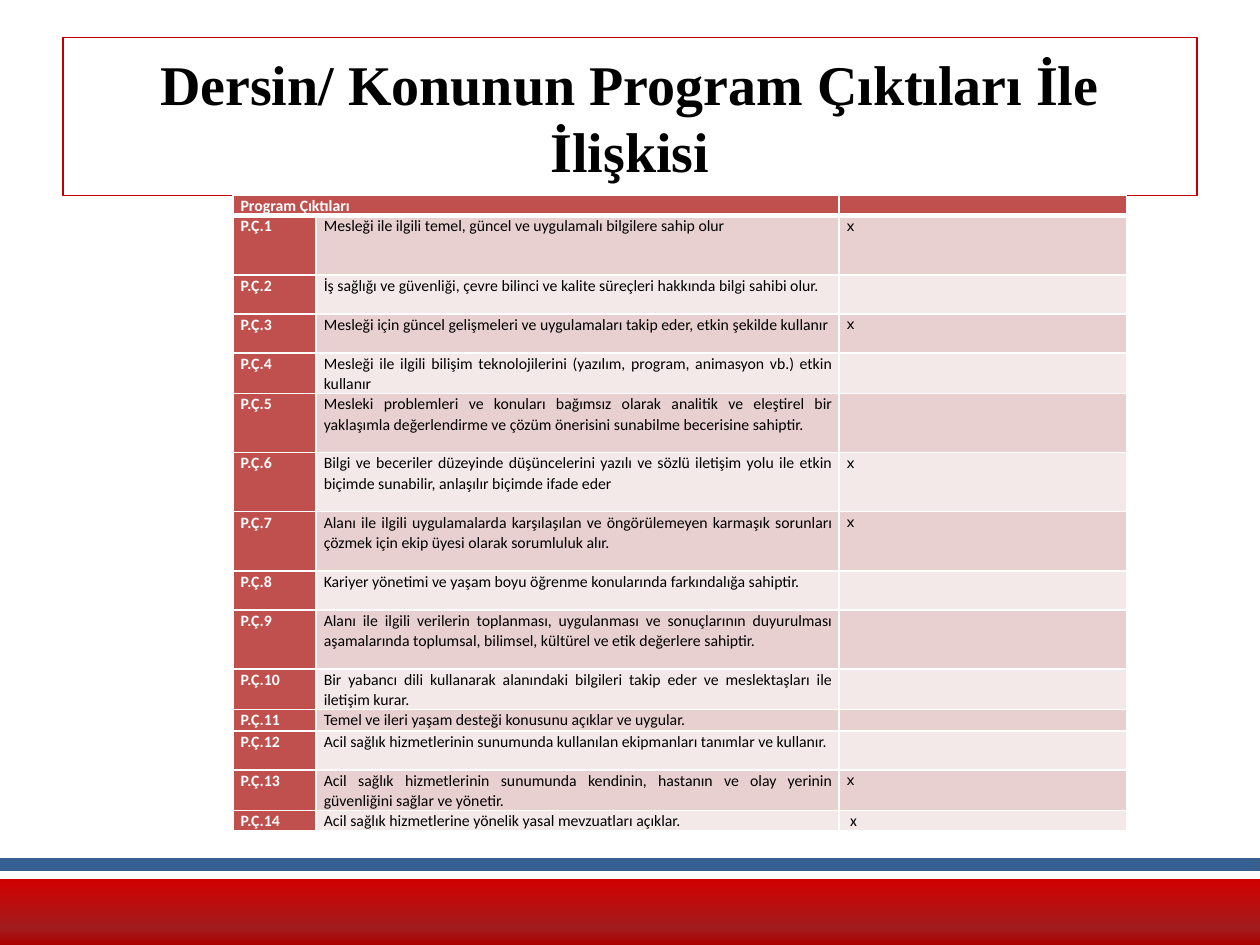
import copy

import lxml.etree
import pptx
import pptx.dml.color
import pptx.enum.shapes
import pptx.enum.text
import pptx.oxml.ns
import pptx.util

Inches = pptx.util.Inches
Pt = pptx.util.Pt
RGBColor = pptx.dml.color.RGBColor
ALIGN = pptx.enum.text.PP_ALIGN
qn = pptx.oxml.ns.qn

BLACK = RGBColor(0x00, 0x00, 0x00)
WHITE = RGBColor(0xFF, 0xFF, 0xFF)
TITLE_RED = RGBColor(0xC0, 0x00, 0x00)
HEADER_RED = RGBColor(0xC0, 0x50, 0x4D)
BAND_DARK = RGBColor(0xE8, 0xD0, 0xD0)
BAND_LIGHT = RGBColor(0xF4, 0xE9, 0xE9)
STRIPE_BLUE = RGBColor(0x37, 0x60, 0x92)
STRIPE_EDGE = RGBColor(0x3A, 0x5F, 0x8C)
FOOTER_STOPS = [
    (0, RGBColor(0xD1, 0x00, 0x00)),
    (0.74, RGBColor(0xA2, 0x1C, 0x1C)),
    (1, RGBColor(0xAB, 0x00, 0x00)),
]

COLUMN_WIDTHS = [0.66, 4.15, 2.28]
HEADER_HEIGHT = 0.16
OUTCOMES = [
    (0.47, "Mesleği ile ilgili temel, güncel ve uygulamalı bilgilere sahip olur", "x"),
    (0.31, "İş sağlığı ve güvenliği, çevre bilinci ve kalite süreçleri hakkında bilgi sahibi olur.", ""),
    (0.31, "Mesleği için güncel gelişmeleri ve uygulamaları takip eder, etkin şekilde kullanır", "x"),
    (0.31, "Mesleği ile ilgili bilişim teknolojilerini (yazılım, program, animasyon vb.) etkin kullanır", ""),
    (0.47, "Mesleki problemleri ve konuları bağımsız olarak analitik ve eleştirel bir yaklaşımla "
           "değerlendirme ve çözüm önerisini sunabilme becerisine sahiptir.", ""),
    (0.47, "Bilgi ve beceriler düzeyinde düşüncelerini yazılı ve sözlü iletişim yolu ile etkin "
           "biçimde sunabilir, anlaşılır biçimde ifade eder", "x"),
    (0.47, "Alanı ile ilgili uygulamalarda karşılaşılan ve öngörülemeyen karmaşık sorunları "
           "çözmek için ekip üyesi olarak sorumluluk alır.", "x"),
    (0.31, "Kariyer yönetimi ve yaşam boyu öğrenme konularında farkındalığa sahiptir.", ""),
    (0.47, "Alanı ile ilgili verilerin toplanması, uygulanması ve sonuçlarının duyurulması "
           "aşamalarında toplumsal, bilimsel, kültürel ve etik değerlere sahiptir.", ""),
    (0.31, "Bir yabancı dili kullanarak alanındaki bilgileri takip eder ve meslektaşları ile iletişim kurar.", ""),
    (0.17, "Temel ve ileri yaşam desteği konusunu açıklar ve uygular.", ""),
    (0.31, "Acil sağlık hizmetlerinin sunumunda kullanılan ekipmanları tanımlar ve kullanır.", ""),
    (0.31, "Acil sağlık hizmetlerinin sunumunda kendinin, hastanın ve olay yerinin güvenliğini "
           "sağlar ve yönetir.", "x"),
    (0.16, "Acil sağlık hizmetlerine yönelik yasal mevzuatları açıklar.", " x"),
]


def write_text(frame, text, size=9, font="Calibri", color=BLACK, bold=False,
               align=ALIGN.JUSTIFY, spacing=1.07):
    """Write one formatted paragraph into a text frame."""
    frame.word_wrap = True
    paragraph = frame.paragraphs[0]
    paragraph.alignment = align
    paragraph.line_spacing = spacing
    if not text:
        lxml.etree.SubElement(paragraph._p, qn("a:endParaRPr"), sz=str(size * 100))
        return
    run = paragraph.add_run()
    run.text = text
    run.font.size = Pt(size)
    run.font.name = font
    run.font.color.rgb = color
    run.font.bold = bold


def set_borders(cell, top, bottom):
    """Give a cell white borders, with the top and bottom widths in points."""
    properties = cell._tc.get_or_add_tcPr()
    for side, width in (("L", 1), ("R", 1), ("T", top), ("B", bottom)):
        border = lxml.etree.SubElement(properties, qn(f"a:ln{side}"), w=str(Pt(width)))
        fill = lxml.etree.SubElement(border, qn("a:solidFill"))
        lxml.etree.SubElement(fill, qn("a:srgbClr"), val=str(WHITE))


def fill_cell(cell, text, fill, top=1, bottom=1, **text_format):
    """Set the borders, fill, margins and text of a table cell."""
    set_borders(cell, top, bottom)
    cell.fill.solid()
    cell.fill.fore_color.rgb = fill
    cell.margin_left = cell.margin_right = Inches(0.06)
    cell.margin_top = cell.margin_bottom = 0
    write_text(cell.text_frame, text, **text_format)


def add_title(slide, left, top, width, height):
    """Add the outlined slide title."""
    title = slide.shapes.add_textbox(left, top, width, height)
    title.line.color.rgb = TITLE_RED
    title.line.width = Pt(0.75)
    title.text_frame.vertical_anchor = pptx.enum.text.MSO_ANCHOR.MIDDLE
    write_text(title.text_frame, "Dersin/ Konunun Program Çıktıları İle İlişkisi", size=32,
               font="Times New Roman", bold=True, align=ALIGN.CENTER, spacing=1.0)


def add_outcomes_table(slide, left, top, width, height):
    """Add the table of program outcomes and their marks."""
    table = slide.shapes.add_table(len(OUTCOMES) + 1, len(COLUMN_WIDTHS),
                                   left, top, width, height).table
    for column, column_width in zip(table.columns, COLUMN_WIDTHS):
        column.width = Inches(column_width)
    table.rows[0].height = Inches(HEADER_HEIGHT)
    for index, heading in enumerate(("Program Çıktıları", "", "")):
        fill_cell(table.cell(0, index), heading, HEADER_RED, bottom=3, color=WHITE, bold=True)
    table.cell(0, 0).merge(table.cell(0, 1))

    for number, (row_height, outcome, mark) in enumerate(OUTCOMES, start=1):
        table.rows[number].height = Inches(row_height)
        band = BAND_DARK if number % 2 else BAND_LIGHT
        edge = 3 if number == 1 else 1
        fill_cell(table.cell(number, 0), f"P.Ç.{number}", HEADER_RED, top=edge,
                  color=WHITE, bold=True)
        fill_cell(table.cell(number, 1), outcome, band, top=edge)
        mark_font = "Karla" if mark == "x" else "Calibri"
        fill_cell(table.cell(number, 2), mark, band, top=edge, font=mark_font)


def add_footer(slide, left, top, width, height):
    """Add the blue stripe and the red gradient band below it."""
    rectangle = pptx.enum.shapes.MSO_SHAPE.RECTANGLE
    stripe = slide.shapes.add_shape(rectangle, left, top, width, Inches(0.08))
    stripe.shadow.inherit = False
    stripe.fill.solid()
    stripe.fill.fore_color.rgb = STRIPE_BLUE
    stripe.line.color.rgb = STRIPE_EDGE
    stripe.line.width = Pt(2)

    gap = Inches(0.16)
    band = slide.shapes.add_shape(rectangle, left, top + gap, width, height - gap)
    band.shadow.inherit = False
    band.line.fill.background()
    band.fill.gradient()
    band.fill.gradient_angle = 270
    stop_list = band._element.spPr.find(".//" + qn("a:gsLst"))
    stop_list.append(copy.deepcopy(stop_list[-1]))
    for stop, (position, color) in zip(band.fill.gradient_stops, FOOTER_STOPS):
        stop.position = position
        stop.color.rgb = color


def main():
    """Build and save the slide."""
    presentation = pptx.Presentation()
    presentation.slide_width = Inches(10)
    presentation.slide_height = Inches(7.5)
    slide = presentation.slides.add_slide(presentation.slide_layouts[6])
    add_footer(slide, Inches(-0.04), Inches(6.82), Inches(10.04), Inches(0.68))
    add_title(slide, Inches(0.5), Inches(0.3), Inches(9), Inches(1.25))
    add_outcomes_table(slide, Inches(1.85), Inches(1.55), Inches(7.09), Inches(5.01))
    presentation.save("out.pptx")


if __name__ == "__main__":
    main()
